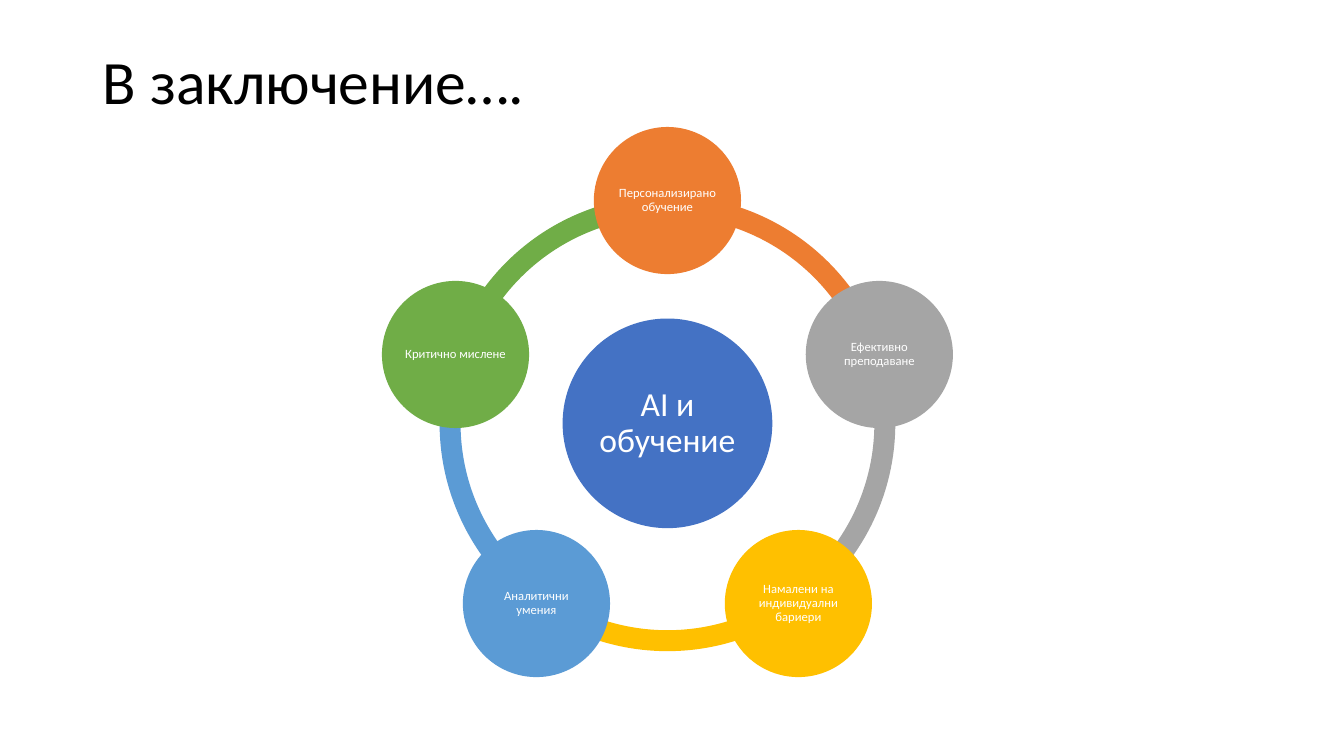
import math

from pptx import Presentation
from pptx.dml.color import RGBColor
from pptx.enum import shapes, text
from pptx.util import Inches, Pt

CENTER_X, CENTER_Y = 6.62, 4.2
ORBIT_RADIUS = 2.21
RING_SIZE = 4.52
HUB_SIZE = 2.08
NODE_SIZE = 1.46
FIRST_ANGLE = 270
DEGREE_UNIT = 0.6

BENEFITS = [
    ("Персонализирано обучение", "ED7D31"),
    ("Ефективно преподаване", "A5A5A5"),
    ("Намалени на индивидуални бариери", "FFC000"),
    ("Аналитични умения", "5B9BD5"),
    ("Критично мислене", "70AD47"),
]
STEP = 360 / len(BENEFITS)


def color(value):
    return RGBColor.from_string(value)


def format_paragraph(paragraph, size, font_color, alignment):
    paragraph.alignment = alignment
    paragraph.line_spacing = 0.9
    paragraph.font.name = "Calibri"
    paragraph.font.size = Pt(size)
    paragraph.font.color.rgb = color(font_color)


def add_title(slide, wording):
    title = slide.shapes.title
    title.left, title.top = Inches(0.92), Inches(0.4)
    title.width, title.height = Inches(11.5), Inches(0.87)
    frame = title.text_frame
    frame.text = wording
    frame.auto_size = text.MSO_AUTO_SIZE.NONE
    frame.vertical_anchor = text.MSO_ANCHOR.MIDDLE
    format_paragraph(frame.paragraphs[0], 44, "000000", text.PP_ALIGN.LEFT)


def add_centered(slide, kind, x, y, size, fill):
    shape = slide.shapes.add_shape(
        kind, Inches(x - size / 2), Inches(y - size / 2), Inches(size), Inches(size)
    )
    shape.shadow.inherit = False
    shape.fill.solid()
    shape.fill.fore_color.rgb = color(fill)
    shape.line.fill.background()
    return shape


def add_arc(slide, start, fill):
    arc = add_centered(
        slide, shapes.MSO_SHAPE.BLOCK_ARC, CENTER_X, CENTER_Y, RING_SIZE, fill
    )
    arc.adjustments[0] = start % 360 * DEGREE_UNIT
    arc.adjustments[1] = (start + STEP) % 360 * DEGREE_UNIT
    arc.adjustments[2] = 0.046


def add_circle(slide, x, y, size, fill, wording, font_size, inset):
    circle = add_centered(slide, shapes.MSO_SHAPE.OVAL, x, y, size, fill)
    frame = circle.text_frame
    frame.word_wrap = True
    frame.vertical_anchor = text.MSO_ANCHOR.MIDDLE
    frame.margin_left = frame.margin_right = Inches(inset)
    frame.margin_top = frame.margin_bottom = Inches(inset)
    frame.text = wording
    format_paragraph(frame.paragraphs[0], font_size, "FFFFFF", text.PP_ALIGN.CENTER)


def main():
    presentation = Presentation()
    presentation.slide_width = Inches(13.33)
    presentation.slide_height = Inches(7.5)
    slide = presentation.slides.add_slide(presentation.slide_layouts[5])
    add_title(slide, "В заключение….")

    for index, (_, fill) in reversed(list(enumerate(BENEFITS))):
        add_arc(slide, FIRST_ANGLE + index * STEP, fill)
    add_circle(slide, CENTER_X, CENTER_Y, HUB_SIZE, "4472C4", "AI и обучение", 24, 0.03)
    for index, (wording, fill) in enumerate(BENEFITS):
        angle = math.radians(FIRST_ANGLE + index * STEP)
        x = CENTER_X + ORBIT_RADIUS * math.cos(angle)
        y = CENTER_Y + ORBIT_RADIUS * math.sin(angle)
        add_circle(slide, x, y, NODE_SIZE, fill, wording, 9, 0.01)

    presentation.save("out.pptx")


if __name__ == "__main__":
    main()
